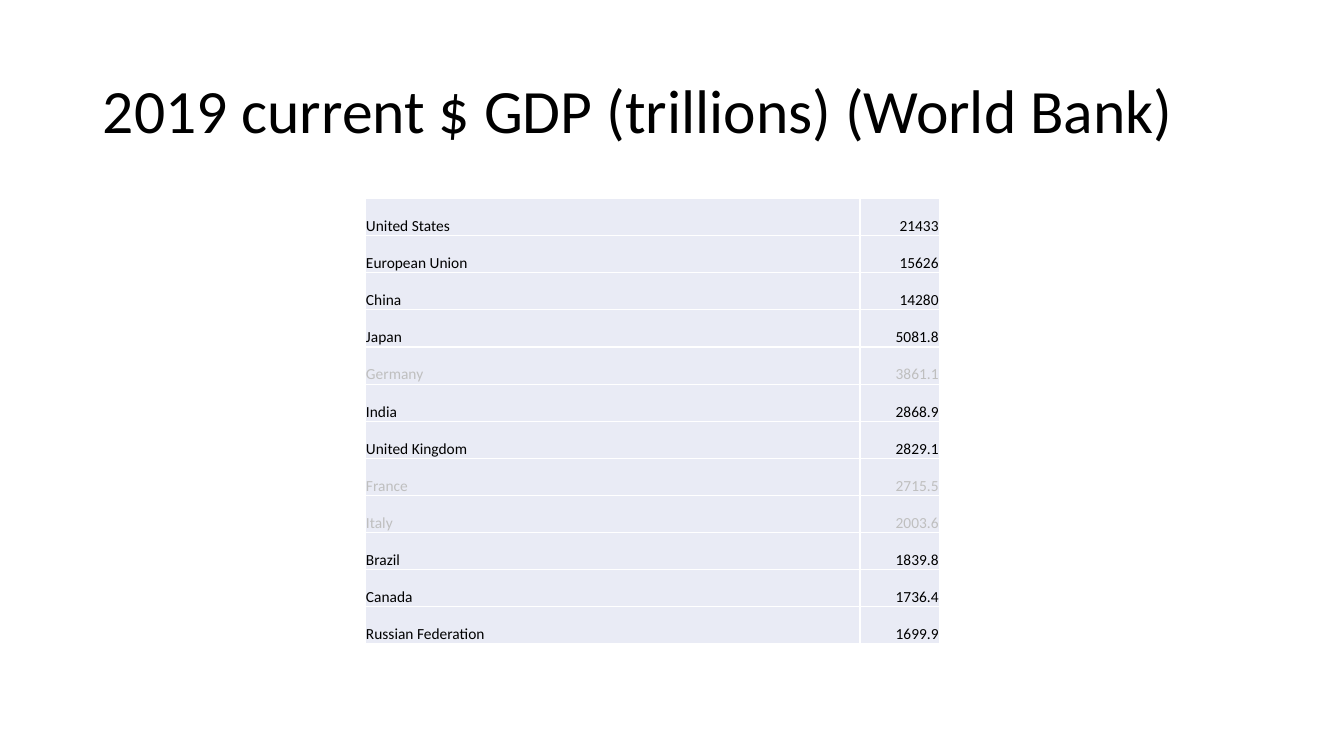
from dataclasses import dataclass

from lxml import etree
from pptx import Presentation
from pptx.dml.color import RGBColor
from pptx.enum.text import MSO_ANCHOR, MSO_AUTO_SIZE, PP_ALIGN
from pptx.oxml.ns import qn
from pptx.util import Inches, Pt

LEFT, RIGHT = PP_ALIGN.LEFT, PP_ALIGN.RIGHT
MIDDLE, BOTTOM = MSO_ANCHOR.MIDDLE, MSO_ANCHOR.BOTTOM
NO_AUTOFIT = MSO_AUTO_SIZE.NONE
TITLE_ONLY = 5


@dataclass(frozen=True)
class Theme:
    font: str = "Calibri"
    title_size: int = 44
    cell_size: int = 11
    ink: str = "000000"
    muted: str = "BFBFBF"
    cell_fill: str = "E9EBF5"
    border: str = "FFFFFF"
    border_width: int = 1


THEME = Theme()

# Lengths in inches
SLIDE_WIDTH, SLIDE_HEIGHT = 13.33, 7.5
TITLE_BOX = (0.92, 0.4, 11.5, 1.45)
TABLE_LEFT, TABLE_TOP, TABLE_HEIGHT = 3.62, 1.97, 4.42
COLUMN_WIDTHS = (4.91, 0.79)
CELL_INSET = 0.01

TITLE = "2019 current $ GDP (trillions) (World Bank)"
GDP = {
    "United States": 21433,
    "European Union": 15626,
    "China": 14280,
    "Japan": 5081.8,
    "Germany": 3861.1,
    "India": 2868.9,
    "United Kingdom": 2829.1,
    "France": 2715.5,
    "Italy": 2003.6,
    "Brazil": 1839.8,
    "Canada": 1736.4,
    "Russian Federation": 1699.9,
}
EU_MEMBERS = {"Germany", "France", "Italy"}


def style_paragraph(paragraph, size, color, align):
    paragraph.alignment = align
    paragraph.font.name = THEME.font
    paragraph.font.size = Pt(size)
    paragraph.font.color.rgb = RGBColor.from_string(color)


def set_title(page, text):
    title = page.shapes.title
    title.left, title.top, title.width, title.height = map(Inches, TITLE_BOX)
    frame = title.text_frame
    frame.text = text
    frame.word_wrap = True
    frame.auto_size = NO_AUTOFIT
    frame.vertical_anchor = MIDDLE
    paragraph = frame.paragraphs[0]
    paragraph.line_spacing = 0.9
    style_paragraph(paragraph, THEME.title_size, THEME.ink, LEFT)


def set_borders(cell):
    # Border lines come before the fill in the cell properties
    properties = cell._tc.get_or_add_tcPr()
    for position, side in enumerate(("a:lnL", "a:lnR", "a:lnT", "a:lnB")):
        line = etree.Element(qn(side), w=str(Pt(THEME.border_width)))
        fill = etree.SubElement(line, qn("a:solidFill"))
        etree.SubElement(fill, qn("a:srgbClr"), val=THEME.border)
        properties.insert(position, line)


def fill_cell(cell, text, color, align):
    cell.text = text
    cell.vertical_anchor = BOTTOM
    cell.margin_left = cell.margin_right = cell.margin_top = Inches(CELL_INSET)
    cell.margin_bottom = 0
    cell.fill.solid()
    cell.fill.fore_color.rgb = RGBColor.from_string(THEME.cell_fill)
    set_borders(cell)
    style_paragraph(cell.text_frame.paragraphs[0], THEME.cell_size, color, align)


def add_gdp_table(page):
    frame = page.shapes.add_table(
        len(GDP), len(COLUMN_WIDTHS), Inches(TABLE_LEFT), Inches(TABLE_TOP),
        Inches(sum(COLUMN_WIDTHS)), Inches(TABLE_HEIGHT))
    table = frame.table
    table.first_row = table.horz_banding = False
    for column, width in zip(table.columns, COLUMN_WIDTHS):
        column.width = Inches(width)
    for row, (economy, value) in zip(table.rows, GDP.items()):
        # Members already counted in the European Union are greyed out
        color = THEME.muted if economy in EU_MEMBERS else THEME.ink
        fill_cell(row.cells[0], economy, color, LEFT)
        fill_cell(row.cells[1], str(value), color, RIGHT)


def main():
    deck = Presentation()
    deck.slide_width, deck.slide_height = Inches(SLIDE_WIDTH), Inches(SLIDE_HEIGHT)
    page = deck.slides.add_slide(deck.slide_layouts[TITLE_ONLY])
    set_title(page, TITLE)
    add_gdp_table(page)
    deck.save("out.pptx")


if __name__ == "__main__":
    main()
